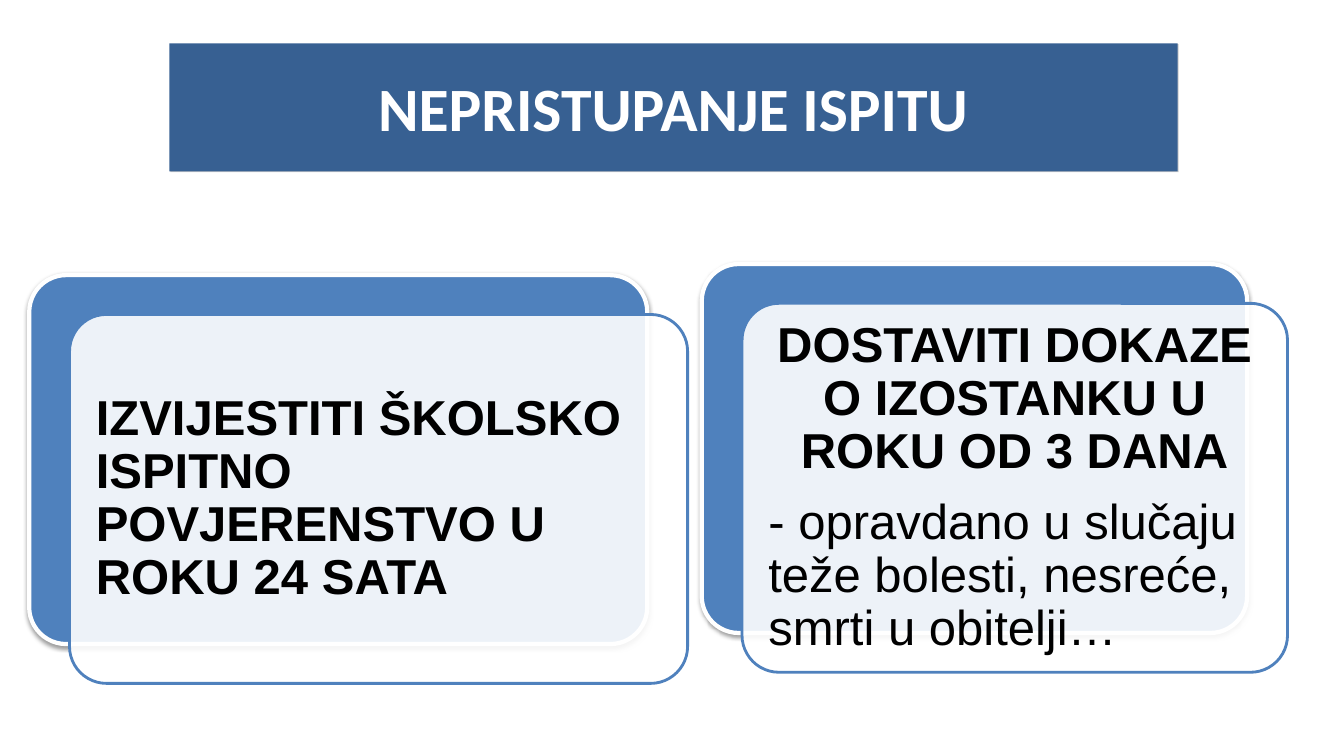
from lxml.etree import SubElement
from pptx import Presentation
from pptx.dml.color import RGBColor
from pptx.enum.shapes import MSO_SHAPE
from pptx.enum.text import MSO_ANCHOR, PP_ALIGN
from pptx.oxml.ns import qn
from pptx.util import Pt

PX = 9144  # EMU in one px, 100 px to the inch
BLUE, NAVY, WHITE, BLACK = "4F81BD", "376092", "FFFFFF", "000000"
LEFT, MID = PP_ALIGN.LEFT, PP_ALIGN.CENTER
STEP = 40   # offset of a card's front from its back
INSET = 11  # gap from a card's front to its text box
PAD = 15    # margin inside the text box


def px(*sizes):
    return [round(size * PX) for size in sizes]


def color(code):
    return RGBColor.from_string(code)


def add_box(slide, kind, box, fill, line=None, width=0):
    shape = slide.shapes.add_shape(kind, *px(*box))
    shape.shadow.inherit = False
    shape.fill.solid()
    shape.fill.fore_color.rgb = color(fill)
    if line:
        shape.line.color.rgb = color(line)
        shape.line.width = Pt(width)
    else:
        shape.line.fill.background()
    if kind == MSO_SHAPE.ROUNDED_RECTANGLE:
        shape.adjustments[0] = 0.1
    return shape


def set_alpha(node, share):
    SubElement(node, qn("a:alpha")).set("val", str(share * 1000))


def add_shadow(shape, share, blur, dist, angle):
    effects = shape._element.spPr.find(qn("a:effectLst"))
    outer = SubElement(effects, qn("a:outerShdw"), blurRad=str(Pt(blur)),
                       dist=str(Pt(dist)), dir=str(angle * 60000),
                       rotWithShape="0")
    tint = SubElement(outer, qn("a:srgbClr"), val=BLACK)
    set_alpha(tint, share)


def style(para, font, size, tone, bold, align):
    para.alignment = align
    for run in para.runs:
        run.font.name = font
        run.font.size = Pt(size)
        run.font.bold = bold
        run.font.color.rgb = color(tone)


def add_title(slide, box, text):
    bar = add_box(slide, MSO_SHAPE.RECTANGLE, box, NAVY)
    add_shadow(bar, 20, 0, 1, 45)
    frame = bar.text_frame
    frame.word_wrap = True
    frame.vertical_anchor = MSO_ANCHOR.MIDDLE
    frame.text = text
    style(frame.paragraphs[0], "Calibri", 44, WHITE, True, MID)


def add_card(slide, box, parts):
    x, y, w, h = box
    # Solid back panel
    back = add_box(slide, MSO_SHAPE.ROUNDED_RECTANGLE, box, BLUE, WHITE, 3)
    add_shadow(back, 38, 3.1, 1.6, 90)

    # Sheer front panel
    x, y = x + STEP, y + STEP - 1
    front = add_box(slide, MSO_SHAPE.ROUNDED_RECTANGLE, (x, y, w, h),
                    WHITE, BLUE, 2)
    set_alpha(front._element.spPr.find(qn("a:solidFill"))[0], 90)

    # Text
    area = (x + INSET, y + INSET, w - 2 * INSET, h - 2 * INSET)
    frame = slide.shapes.add_textbox(*px(*area)).text_frame
    frame.word_wrap = True
    frame.vertical_anchor = MSO_ANCHOR.MIDDLE
    frame.margin_left = frame.margin_right = PAD * PX
    frame.margin_top = frame.margin_bottom = PAD * PX
    frame.text = "\n".join(text for text, bold, align in parts)
    for para, (text, bold, align) in zip(frame.paragraphs, parts):
        para.line_spacing = 0.9
        para.space_after = Pt(13)
        style(para, "Arial", 35, BLACK, bold, align)


def main():
    deck = Presentation()
    deck.slide_width, deck.slide_height = px(1333, 750)
    slide = deck.slides.add_slide(deck.slide_layouts[6])
    add_title(slide, (168, 43, 1000, 127), "NEPRISTUPANJE ISPITU")
    add_card(slide, (29, 273, 613, 366), [
        ("IZVIJESTITI ŠKOLSKO ISPITNO POVJERENSTVO U ROKU 24 SATA",
         True, LEFT),
    ])
    add_card(slide, (696, 262, 541, 366), [
        ("DOSTAVITI DOKAZE O IZOSTANKU U ROKU OD 3 DANA", True, MID),
        ("- opravdano u slučaju teže bolesti, nesreće, smrti u obitelji…",
         False, LEFT),
    ])
    deck.save("out.pptx")


if __name__ == "__main__":
    main()
